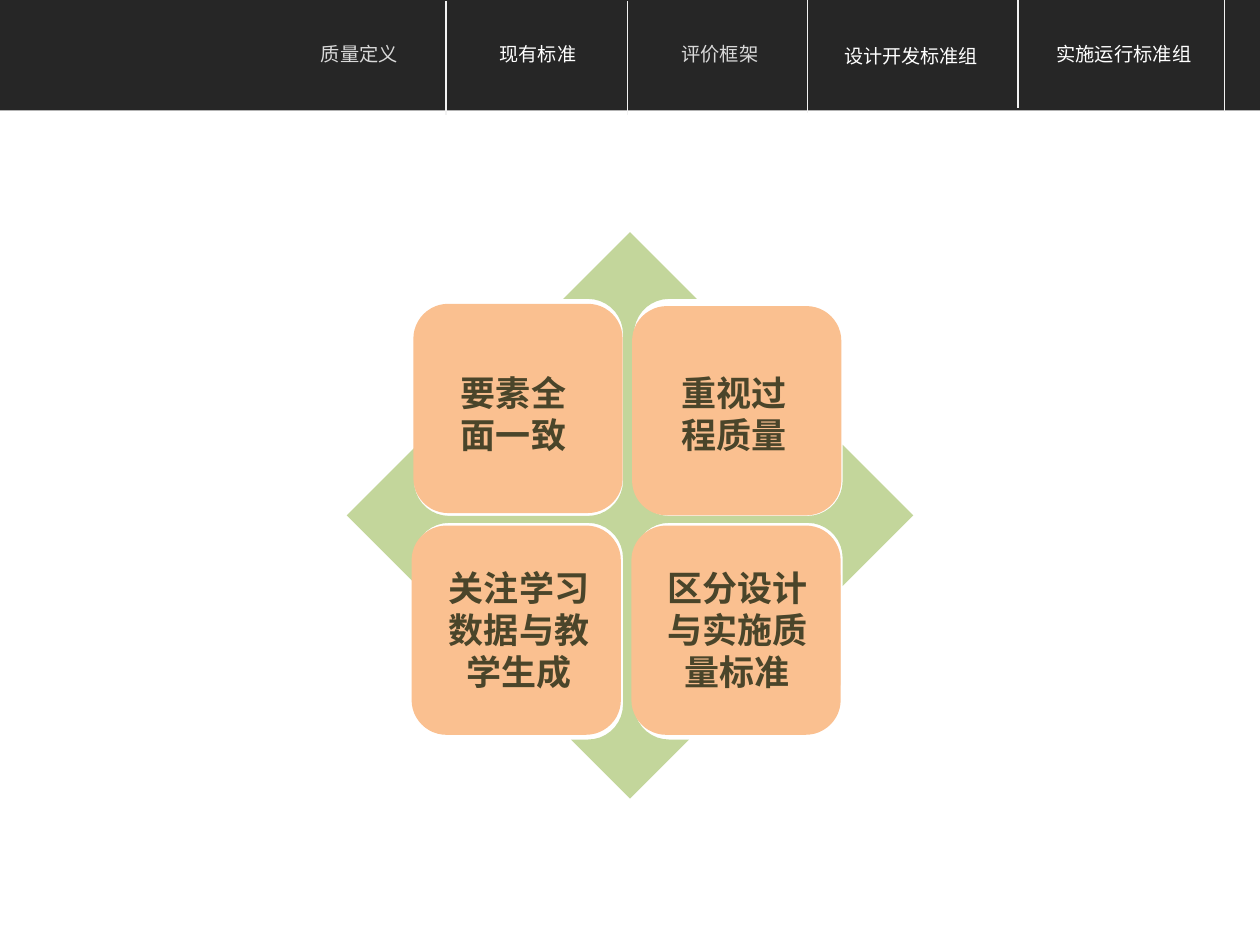
"""Build the slide of four quality principles on a diamond under a navigation bar."""
from math import cos, radians, sin

from lxml.etree import SubElement
from pptx import Presentation
from pptx.dml.color import RGBColor
from pptx.enum.shapes import MSO_CONNECTOR, MSO_SHAPE
from pptx.enum.text import MSO_ANCHOR as Anchor, PP_ALIGN as Align
from pptx.oxml.ns import qn
from pptx.util import Pt

FONT = "Noto Sans CJK SC"
COLORS = {
    "bar": "262626", "divider": "F2F2F2", "muted": "D9D9D9", "bright": "FFFFFF",
    "diamond": "C3D69B", "tile": "FAC090", "ink": "4A452A",
}
BARS = [(0, 0, 720, 63.1), (581.8, -0.7, 126, 63.1)]
TABS = [
    ("质量定义", 156.2, 20.9, 98.6, 11, "muted"),
    ("现有标准", 254.9, 20.9, 105.1, 10.9, "bright"),
    ("评价框架", 358.6, 20.9, 105.8, 11, "muted"),
    ("设计开发标准组", 464.4, 21.6, 112.3, 10.9, "bright"),
    ("实施运行标准组", 596.2, 20.9, 92.2, 11, "bright"),
]
DIVIDERS = [(254.9, 0.7), (358.6, 0.7), (461.5, 0), (581.8, -2.9), (699.8, -0.7)]
DIVIDER_HEIGHT = 64.8

CENTER_X, CENTER_Y, REACH, RADIUS = 360, 294.5, 161.9, 20
OUTER_LEFT, INNER_LEFT, INNER_RIGHT, OUTER_RIGHT = 256.6, 336, 382.3, 461.5
OUTER_TOP, INNER_TOP, INNER_BOTTOM, OUTER_BOTTOM = 190.8, 274.8, 318.8, 402.6
NOTCHES = [
    [(INNER_RIGHT, OUTER_TOP), (INNER_RIGHT, INNER_TOP), (OUTER_RIGHT, INNER_TOP)],
    [(OUTER_RIGHT, INNER_BOTTOM), (INNER_RIGHT, INNER_BOTTOM), (INNER_RIGHT, OUTER_BOTTOM)],
    [(INNER_LEFT, OUTER_BOTTOM), (INNER_LEFT, INNER_BOTTOM), (OUTER_LEFT, INNER_BOTTOM)],
    [(OUTER_LEFT, INNER_TOP), (INNER_LEFT, INNER_TOP), (INNER_LEFT, OUTER_TOP)],
]
ARC_STARTS = [(270, 180, 90), (0, 270, 180), (90, 0, 270), (180, 90, 0)]

TILE_SIZE = 119.6
TILES = [(360.8, 300.3), (236.2, 173.6), (361.2, 174.9), (235.2, 300.3)]
PRINCIPLES = [
    ("要素全面一致", 247, 205.2, 92.9, 61.9),
    ("重视过程质量", 372.2, 205.2, 95, 61.9),
    ("关注学习数据与教学生成", 241.9, 315.4, 109.4, 88.6),
    ("区分设计与实施质量标准", 362.2, 315.4, 118.1, 88.6),
]


def color(name):
    return RGBColor.from_string(COLORS[name])


def paint(shape, fill):
    shape.shadow.inherit = False
    shape.fill.solid()
    shape.fill.fore_color.rgb = color(fill)
    shape.line.fill.background()


def add_block(page, kind, place, fill):
    shape = page.shapes.add_shape(kind, *map(Pt, place))
    paint(shape, fill)
    return shape


def write(box, text, *, size, ink, bold=False, spacing=None, inset=(7.2, 3.6)):
    frame = box.text_frame
    frame.word_wrap = True
    frame.vertical_anchor = Anchor.MIDDLE
    frame.margin_left = frame.margin_right = Pt(inset[0])
    frame.margin_top = frame.margin_bottom = Pt(inset[1])
    para = frame.paragraphs[0]
    para.alignment = Align.CENTER
    if spacing:
        para.line_spacing = Pt(spacing)
    span = para.add_run()
    span.text = text
    span.font.size, span.font.bold, span.font.name = Pt(size), bold, FONT
    span.font.color.rgb = color(ink)
    SubElement(span.font._element, qn("a:ea")).set("typeface", FONT)


def add_header(page):
    for place in BARS:
        add_block(page, MSO_SHAPE.RECTANGLE, place, "bar")
    for text, left, top, width, size, ink in TABS:
        box = page.shapes.add_textbox(Pt(left), Pt(top), Pt(width), Pt(20.2))
        write(box, text, size=size, ink=ink, inset=(0, 0))
    for x, top in DIVIDERS:
        line = page.shapes.add_connector(
            MSO_CONNECTOR.STRAIGHT, Pt(x), Pt(top), Pt(x), Pt(top + DIVIDER_HEIGHT))
        line.line.color.rgb = color("divider")
        line.line.width = Pt(0.75)
        SubElement(line._element.spPr, qn("a:effectLst"))


def arc(center, start):
    angles = [radians(start - step) for step in range(0, 91, 10)]
    return [(center[0] + RADIUS * cos(a), center[1] + RADIUS * sin(a)) for a in angles]


def diamond_outline():
    edges = [OUTER_TOP - RADIUS, OUTER_RIGHT + RADIUS,
             OUTER_BOTTOM + RADIUS, OUTER_LEFT - RADIUS]
    points = []
    for side, (edge, corners, starts) in enumerate(zip(edges, NOTCHES, ARC_STARTS)):
        dx, dy = [(0, -1), (1, 0), (0, 1), (-1, 0)][side]
        tip = (CENTER_X + dx * REACH, CENTER_Y + dy * REACH)
        half = abs(edge - (tip[0] if dx else tip[1]))
        base = (tip[0] - dx * half, tip[1] - dy * half)
        points += [(base[0] + dy * half, base[1] - dx * half), tip,
                   (base[0] - dy * half, base[1] + dx * half)]
        for corner, start in zip(corners, starts):
            points += arc(corner, start)
    return [(Pt(x), Pt(y)) for x, y in points]


def add_diamond(page):
    first, *rest = diamond_outline()
    builder = page.shapes.build_freeform(*first)
    builder.add_line_segments(rest, close=True)
    paint(builder.convert_to_shape(), "diamond")


def add_principles(page):
    for left, top in TILES:
        add_block(page, MSO_SHAPE.ROUNDED_RECTANGLE,
                  (left, top, TILE_SIZE, TILE_SIZE), "tile")
    for text, *place in PRINCIPLES:
        label = add_block(page, MSO_SHAPE.ROUNDED_RECTANGLE, place, "tile")
        write(label, text, size=20, ink="ink", bold=True, spacing=24)


def main():
    deck = Presentation()
    deck.slide_width, deck.slide_height = Pt(720), Pt(540)
    page = deck.slides.add_slide(deck.slide_layouts[6])
    add_header(page)
    add_diamond(page)
    add_principles(page)
    deck.save("out.pptx")


if __name__ == "__main__":
    main()
